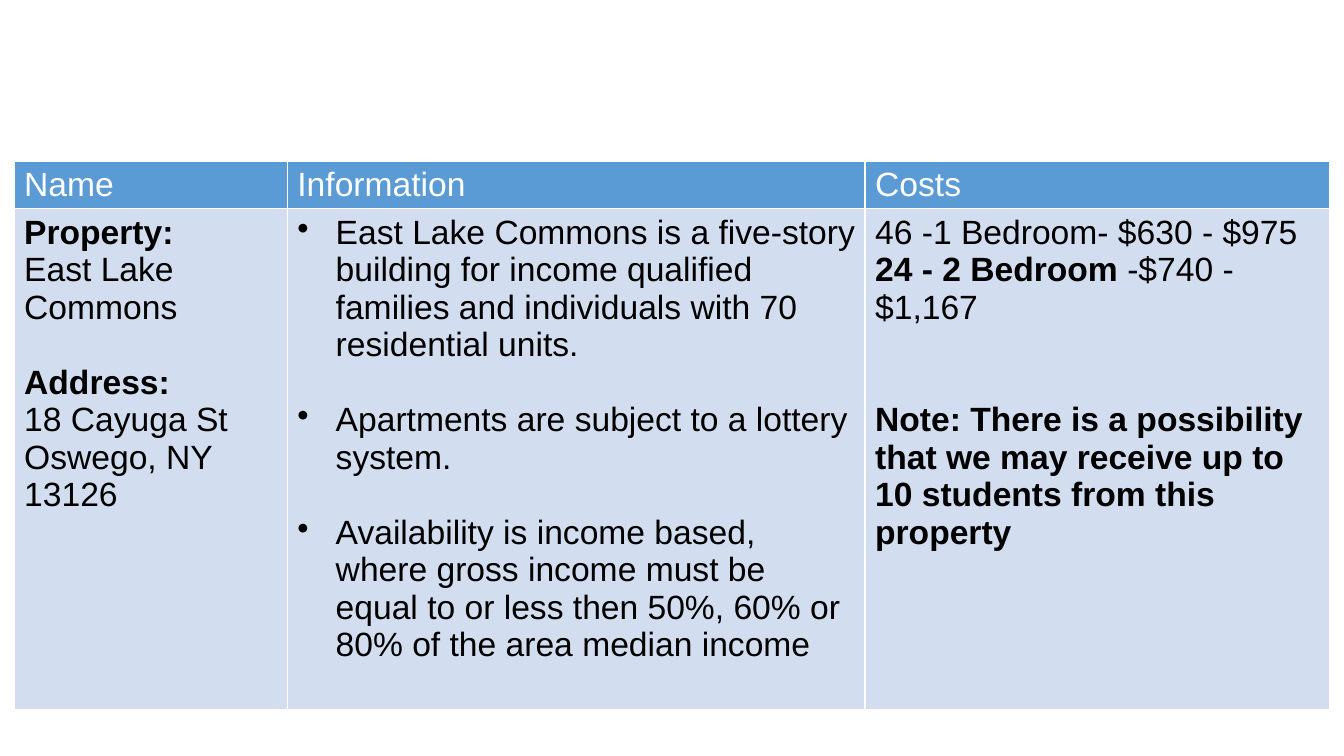
from dataclasses import dataclass
from lxml.etree import SubElement as Sub
from pptx import Presentation as Deck
from pptx.dml.color import RGBColor as Rgb
from pptx.oxml.ns import qn
from pptx.util import Inches, Pt


@dataclass(frozen=True)
class Theme:
    face: str = "Arial"
    size: float = 24
    line: float = 26.8
    rule: float = 1
    indent: float = 0.38
    head: str = "5B9BD5"
    body: str = "D2DEEF"
    light: str = "FFFFFF"
    dark: str = "000000"


def paint(node, tone):
    fill = Sub(node, qn("a:solidFill"))
    Sub(fill, qn("a:srgbClr"), val=tone)


class Page:
    def __init__(self, deck, theme):
        self.theme = theme
        self.slide = deck.slides.add_slide(deck.slide_layouts[6])

    def edge(self, cell):
        props = cell._tc.get_or_add_tcPr()
        for side in "LRTB":
            line = Sub(props, qn(f"a:ln{side}"), w=str(Pt(self.theme.rule)))
            paint(line, self.theme.light)

    def bullet(self, para):
        props = para._p.get_or_add_pPr()
        width = Inches(self.theme.indent)
        props.set("marL", str(width))
        props.set("indent", str(-width))
        color = Sub(props, qn("a:buClr"))
        Sub(color, qn("a:srgbClr"), val=self.theme.dark)
        Sub(props, qn("a:buChar"), char="•")

    def label(self, para, runs, tone):
        for text, bold in runs:
            run = para.add_run()
            run.text = text
            form = {"name": self.theme.face, "size": Pt(self.theme.size), "bold": bold}
            for key, value in form.items():
                setattr(run.font, key, value)
            run.font.color.rgb = Rgb.from_string(tone)

    def fill(self, cell, paras, back, tone, dots=False):
        self.edge(cell)
        cell.fill.solid()
        cell.fill.fore_color.rgb = Rgb.from_string(back)
        frame = cell.text_frame
        for i, (gap, runs) in enumerate(paras):
            para = frame.add_paragraph() if i else frame.paragraphs[0]
            if dots:
                self.bullet(para)
            if gap:
                para.space_before = Pt(gap * self.theme.line)
            self.label(para, runs, tone)

    def table(self, left, top, widths, heights, heads, cells, dotted):
        frame = self.slide.shapes.add_table(
            len(heights), len(widths), Inches(left), Inches(top),
            Inches(sum(widths)), Inches(sum(heights)))
        grid = frame.table
        for key, value in {"first_row": False, "horz_banding": False}.items():
            setattr(grid, key, value)
        for row, height in zip(grid.rows, heights):
            row.height = Inches(height)
        for i, width in enumerate(widths):
            grid.columns[i].width = Inches(width)
            self.fill(grid.cell(0, i), [(0, [(heads[i], False)])],
                      self.theme.head, self.theme.light)
            self.fill(grid.cell(1, i), cells[i], self.theme.body,
                      self.theme.dark, i == dotted)


HEADS = ["Name", "Information", "Costs"]
PLACE = [
    (0, [("Property:", True)]),
    (0, [("East Lake Commons", False)]),
    (1, [("Address:", True)]),
    (0, [("18 Cayuga St", False)]),
    (0, [("Oswego, NY 13126", False)]),
]
FACTS = [
    (0, [("East Lake Commons is a five-story building for income qualified "
          "families and individuals with 70 residential units.", False)]),
    (1, [("Apartments are subject to a lottery system.", False)]),
    (1, [("Availability is income based, where gross income must be equal to "
          "or less then 50%, 60% or 80% of the area median income", False)]),
]
COSTS = [
    (0, [("46 -1 Bedroom- $630 - $975", False)]),
    (0, [("24 - 2 Bedroom ", True), ("-$740 - $1,167", False)]),
    (2, [("Note: There is a possibility that we may receive up to 10 students "
          "from this property", True)]),
]


def main():
    deck = Deck()
    for key, value in {"slide_width": 13.33, "slide_height": 7.5}.items():
        setattr(deck, key, Inches(value))
    page = Page(deck, Theme())
    page.table(0.14, 1.6, [2.71, 5.73, 4.61], [0.47, 4.97],
               HEADS, [PLACE, FACTS, COSTS], 1)
    deck.save("out.pptx")


if __name__ == "__main__":
    main()
